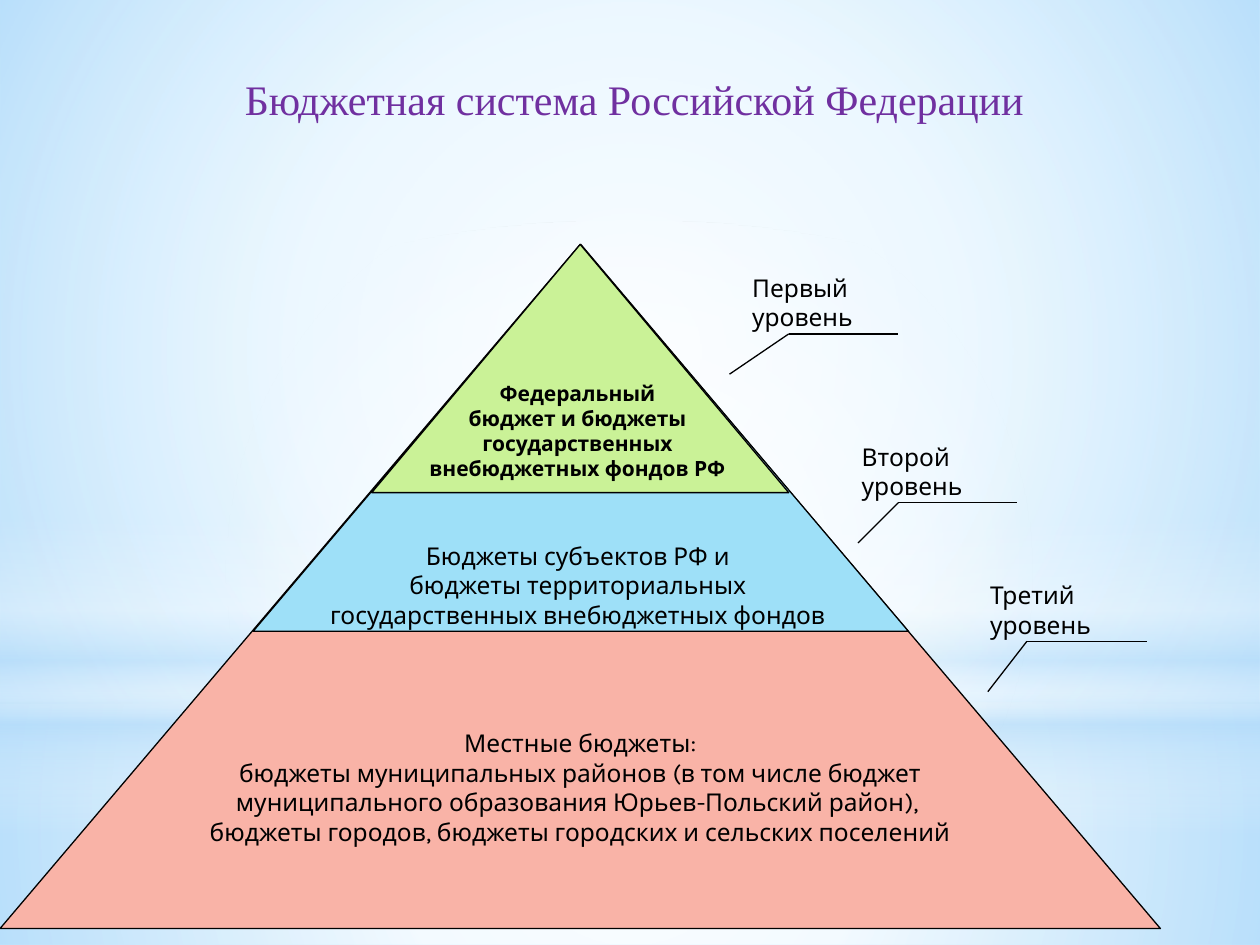
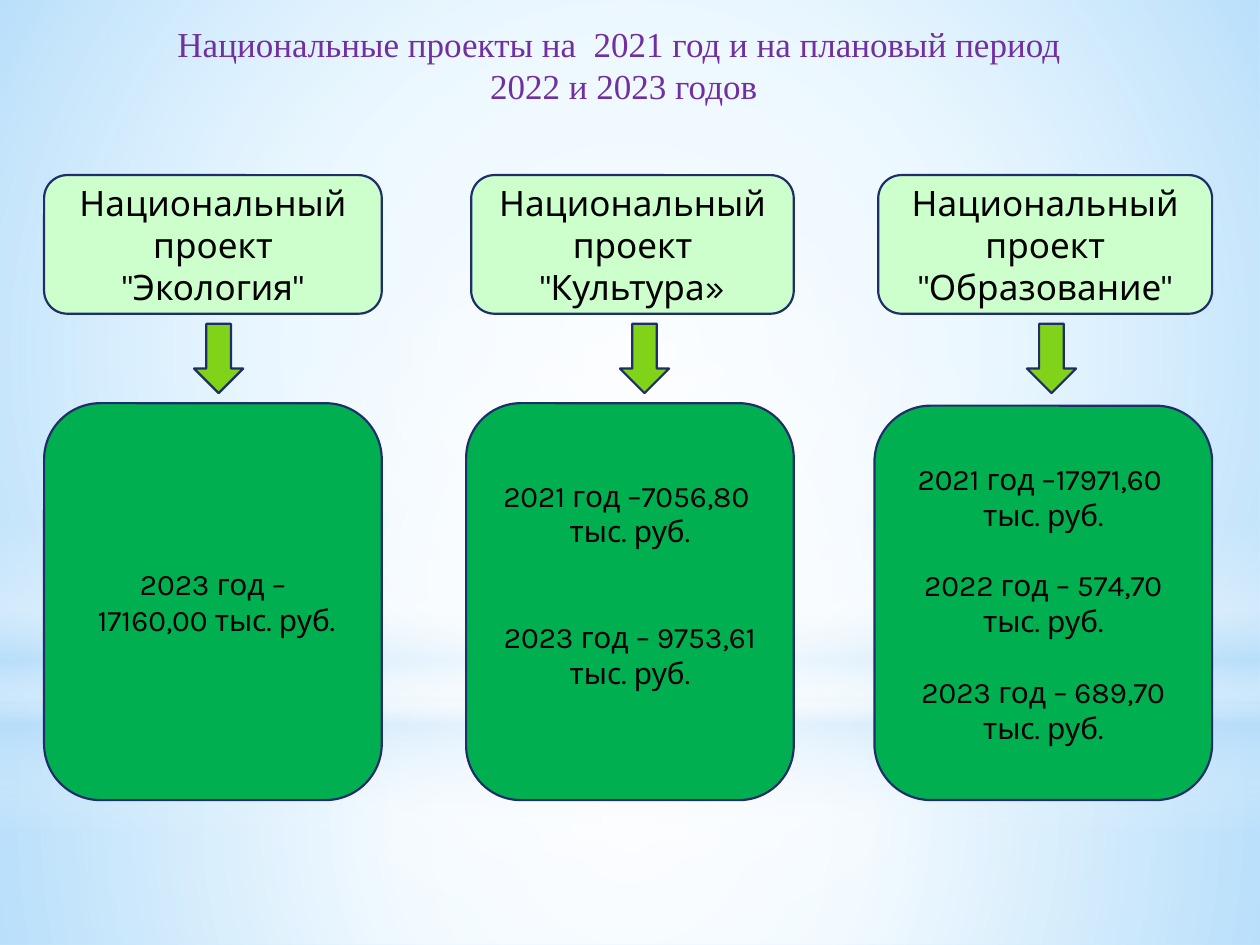
from dataclasses import dataclass

from pptx import Presentation
from pptx.dml.color import RGBColor as Rgb
from pptx.enum.shapes import MSO_CONNECTOR as Conn, MSO_SHAPE as Kind
from pptx.enum.text import MSO_ANCHOR as Anchor, PP_ALIGN as Align
from pptx.oxml import parse_xml
from pptx.oxml.ns import nsdecls, qn
from pptx.util import Inches as In, Pt


@dataclass(frozen=True)
class Theme:
    back: str = "CCECFF"
    white: str = "FFFFFF"
    sky: str = "B4DCFA"
    ink: str = "000000"
    violet: str = "7030A0"
    navy: str = "1F2E69"
    rose: str = "F9B3A7"
    blue: str = "9EE0F8"
    lime: str = "CAF297"
    mint: str = "CCFFCC"
    green: str = "00B050"
    leaf: str = "81D31A"
    serif: str = "Times New Roman"
    sans: str = "Karla"
    title: int = 24
    head: int = 20
    sum: int = 17
    body: int = 14
    small: int = 12
    thin: float = 0.75
    edge: float = 1.25


T = Theme()


def draw(slide, kind, box, fill, line, width):
    """Add a flat shape with a solid fill and an outline; box is in inches."""
    shape = slide.shapes.add_shape(kind, *map(In, box))
    shape.shadow.inherit = False
    shape.fill.solid()
    shape.fill.fore_color.rgb = Rgb.from_string(fill)
    shape.line.color.rgb = Rgb.from_string(line)
    shape.line.width = Pt(width)
    return shape


def write(shape, paras, size, font=T.sans, color=T.ink, bold=False,
          align=Align.CENTER, anchor=Anchor.MIDDLE, wrap=True, gap=0):
    """Fill a shape with paragraphs; each is a string or a list of (text, size)."""
    frame = shape.text_frame
    frame.word_wrap = wrap
    frame.vertical_anchor = anchor
    for num, runs in enumerate(paras):
        para = frame.add_paragraph() if num else frame.paragraphs[0]
        para.alignment = align
        if num and gap:
            para.space_before = Pt(gap)
        for text, pts in [(runs, size)] if isinstance(runs, str) else runs:
            run = para.add_run()
            run.text = text
            run.font.name = font
            run.font.size = Pt(pts)
            run.font.bold = bold
            run.font.color.rgb = Rgb.from_string(color)
    return frame


deck = Presentation()
deck.slide_width, deck.slide_height = In(10), In(7.5)
blank = deck.slide_layouts[6]
for holder in list(blank.placeholders):
    blank.shapes._spTree.remove(holder._element)
fill = deck.slide_master.background.fill
fill.solid()
fill.fore_color.rgb = Rgb.from_string(T.back)

first = deck.slides.add_slide(blank)
second = deck.slides.add_slide(blank)

# Shared backdrop: soft gradients, moved to the layout that both slides use
ROUND = ('<a:path path="circle"><a:fillToRect l="50000" t="50000" '
         'r="50000" b="50000"/></a:path>')
DOWN = '<a:lin ang="5400000" scaled="0"/>'
glows = [
    (Kind.RECTANGLE, (0, 5.58, 10, 1.92), ROUND,
     [(0, T.white, 91), (37, T.white, 76), (100, T.sky, 79)]),
    (Kind.RECTANGLE, (0, 0, 10, 5.58), ROUND,
     [(0, T.white, 89), (48, T.white, 62), (100, T.sky, 79)]),
    (Kind.RECTANGLE, (0, 4.12, 10, 2.5), DOWN,
     [(0, T.white, 0), (29, T.white, 30), (45, T.sky, 40),
      (55, T.white, 26), (65, T.sky, 60), (100, T.white, 0)]),
    (Kind.OVAL, (0, 1.75, 10, 5.58), ROUND,
     [(0, T.white, 100), (56, T.white, 0)]),
]
for kind, box, way, stops in glows:
    glow = draw(first, kind, box, T.white, T.white, T.thin)
    glow.line.fill.background()
    marks = "".join(
        f'<a:gs pos="{pos * 1000}"><a:srgbClr val="{color}">'
        f'<a:alpha val="{alpha * 1000}"/></a:srgbClr></a:gs>'
        for pos, color, alpha in stops)
    grad = parse_xml(f'<a:gradFill {nsdecls("a")} rotWithShape="1">'
                     f'<a:gsLst>{marks}</a:gsLst>{way}</a:gradFill>')
    props = glow._element.spPr
    props.replace(props.find(qn("a:solidFill")), grad)
    blank.shapes._spTree.append(glow._element)

# Titles
titles = [
    (first, (1.61, 0.39, 6.85, 0.79), T.title, Anchor.MIDDLE,
     ["Бюджетная система Российской Федерации"]),
    (second, (0.28, 0.13, 9.34, 0.77), T.head, Anchor.TOP,
     ["Национальные проекты на  2021 год и на плановый период ",
      "2022 и 2023 годов"]),
]
for slide, box, size, anchor, lines in titles:
    write(slide.shapes.add_textbox(*map(In, box)), lines, size,
          T.serif, T.violet, anchor=anchor)

# Slide 1: pyramid of three triangles with a common tip
tip = 1.94
tiers = [
    (0, 9.21, 5.43, T.rose, T.body, False, 0.52, 0.05,
     ["Местные бюджеты:",
      " бюджеты муниципальных районов (в том числе бюджет ",
      "муниципального образования Юрьев-Польский район), ",
      "бюджеты городов, бюджеты городских и сельских поселений"]),
    (2.01, 5.2, 3.07, T.blue, T.body, False, 0.8, 0,
     ["Бюджеты субъектов РФ и ", "бюджеты территориальных ",
      "государственных внебюджетных фондов "]),
    (2.95, 3.31, 1.97, T.lime, T.small, True, 0.05, 0.05,
     ["Федеральный ", "бюджет и бюджеты ", "государственных ",
      "внебюджетных фондов РФ "]),
]
for left, width, high, color, size, bold, top, low, lines in tiers:
    tier = draw(first, Kind.ISOSCELES_TRIANGLE, (left, tip, width, high),
                color, T.ink, T.thin)
    frame = write(tier, lines, size, bold=bold, wrap=False)
    frame.margin_top, frame.margin_bottom = In(top), In(low)

# Callouts: label, bend of the line, its lower end, its right end, label width
calls = [
    (["Первый уровень"], (6.26, 2.65), (5.79, 2.97), 7.13, 1.69),
    ([[("Второй", T.body), (" ", T.small), ("уровень", T.body)]],
     (7.13, 3.99), (6.81, 4.31), 8.07, 1.62),
    (["Третий уровень"], (8.15, 5.09), (7.84, 5.49), 9.1, 1.63),
]
for label, bend, foot, end, width in calls:
    x, y = bend
    for start, stop in [(foot, bend), (bend, (end, y))]:
        line = first.shapes.add_connector(
            Conn.STRAIGHT, *map(In, (*start, *stop)))
        line.line.color.rgb = Rgb.from_string(T.ink)
        line.line.width = Pt(T.thin)
        line._element.spPr.append(parse_xml(f'<a:effectLst {nsdecls("a")}/>'))
    note = first.shapes.add_textbox(
        In(x - 0.39), In(y - 0.53), In(width), In(0.56))
    write(note, label, T.body, align=Align.LEFT)

# Slide 2: project heading, arrow and yearly sums in three columns
base = 6.35
plans = [
    ('Национальный проект "Экология"', 0.35, 2.68, 1.54,
     0.35, 3.2, 0, 0.05, ["2023 год –", " 17160,00 тыс. руб."]),
    ('Национальный проект "Культура»', 3.74, 2.56, 4.92,
     3.7, 3.2, 40, 0.33, ["2021 год –7056,80  тыс. руб.",
                          "2023 год – 9753,61 тыс. руб."]),
    ('Национальный проект "Образование"', 6.97, 2.65, 8.15,
     6.94, 3.22, 20, 0.05, ["2021 год –17971,60  тыс. руб.",
                            "2022 год – 574,70 тыс. руб.",
                            "2023 год – 689,70 тыс. руб."]),
]
for name, left, width, mid, side, top, gap, low, sums in plans:
    head = draw(second, Kind.ROUNDED_RECTANGLE, (left, 1.39, width, 1.1),
                T.mint, T.navy, T.edge)
    write(head, [name], T.head)
    card = draw(second, Kind.ROUNDED_RECTANGLE,
                (side, top, left + width - side, base - top),
                T.green, T.navy, T.edge)
    write(card, sums, T.sum, gap=gap).margin_bottom = In(low)
    draw(second, Kind.DOWN_ARROW, (mid, 2.57, 0.39, 0.55),
         T.leaf, T.navy, T.edge)

deck.save("out.pptx")
